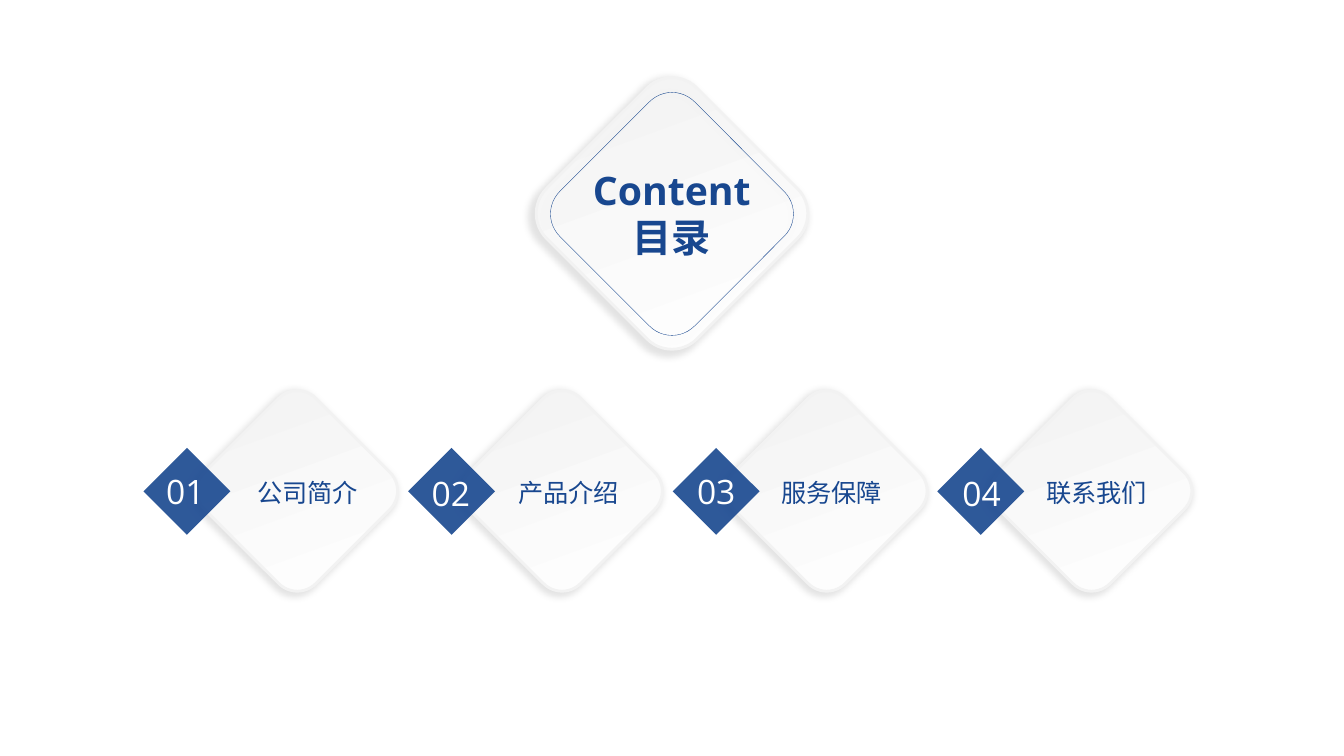
from dataclasses import dataclass
from lxml.etree import SubElement
from pptx import Presentation
from pptx.dml.color import RGBColor
from pptx.enum.shapes import MSO_SHAPE
from pptx.enum.text import MSO_AUTO_SIZE, PP_ALIGN
from pptx.oxml.ns import qn
from pptx.util import Pt


@dataclass(frozen=True)
class Theme:
    navy: RGBColor = RGBColor(0x18, 0x47, 0x8F)
    white: RGBColor = RGBColor(0xFF, 0xFF, 0xFF)
    mist: RGBColor = RGBColor(0xF2, 0xF2, 0xF2)
    font: str = "Open Sans"
    title_size: int = 28
    number_size: int = 24
    label_size: int = 18


theme = Theme()
deck = Presentation()
deck.slide_width, deck.slide_height = Pt(960), Pt(540)
slide = deck.slides.add_slide(deck.slide_layouts[6])


def add_tile(left, top, side, raised=True):
    """Add a rounded diamond with a soft shadow: a shaded tile, or only its thin outline."""
    tile = slide.shapes.add_shape(MSO_SHAPE.ROUNDED_RECTANGLE, Pt(left), Pt(top), Pt(side), Pt(side))
    tile.rotation = 45
    if raised:
        tile.fill.gradient()
        tile.fill.gradient_angle = 110
        for stop, color in zip(tile.fill.gradient_stops, (theme.white, theme.mist)):
            stop.color.rgb = color
        tile._element.spPr.find(qn("a:gradFill")).set("rotWithShape", "0")
    else:
        tile.fill.background()
    tile.line.color.rgb = theme.mist if raised else theme.navy
    tile.line.width = Pt(2 if raised else 0.25)
    tile.shadow.inherit = False
    effects = tile._element.spPr.find(qn("a:effectLst"))
    shadow = SubElement(effects, qn("a:outerShdw"), blurRad=str(Pt(5)), sx="102000",
                        sy="102000", algn="tr", rotWithShape="0")
    shade = SubElement(shadow, qn("a:srgbClr"), val="000000")
    SubElement(shade, qn("a:alpha"), val="11000")


def add_text(lines, left, top, width, height, size, color, bold=False,
             align=PP_ALIGN.CENTER, wrap=True):
    frame = slide.shapes.add_textbox(Pt(left), Pt(top), Pt(width), Pt(height)).text_frame
    frame.word_wrap = wrap
    frame.auto_size = MSO_AUTO_SIZE.SHAPE_TO_FIT_TEXT
    for index, line in enumerate(lines):
        paragraph = frame.add_paragraph() if index else frame.paragraphs[0]
        paragraph.alignment = align
        run = paragraph.add_run()
        run.text = line
        run.font.name = theme.font
        run.font.size = Pt(size)
        run.font.bold = bold
        run.font.color.rgb = color
        SubElement(run.font._element, qn("a:ea"), typeface=theme.font)


# Heading
add_tile(404, 76.5, 152)
add_tile(412, 84.8, 136, raised=False)
add_text(["Content", "目录"], 389.5, 115.2, 180.7, 74.9, theme.title_size, theme.navy, bold=True)

# Sections: name, left edge of its label, top of its number
sections = [
    ("公司简介", 160.6, 332.6),
    ("产品介绍", 347, 334.1),
    ("服务保障", 535, 332.6),
    ("联系我们", 724.3, 334.1),
]
for index, (section, label_left, number_top) in enumerate(sections):
    add_tile(156.2 + 189.1 * index, 294.5, 112.3)

    badge = slide.shapes.add_shape(MSO_SHAPE.RECTANGLE, Pt(111.6 + 189 * index), Pt(329),
                                   Pt(43.9), Pt(43.9))
    badge.rotation = 225
    badge.fill.solid()
    badge.fill.fore_color.rgb = theme.navy
    badge_color = badge._element.spPr.find(qn("a:solidFill")).find(qn("a:srgbClr"))
    SubElement(badge_color, qn("a:alpha"), val="90000")
    badge.line.fill.background()
    badge.shadow.inherit = False

    add_text([section], label_left, 337.7, 118, 29, theme.label_size, theme.navy)
    add_text([f"{index + 1:02}"], 111.6 + 189.6 * index, number_top, 42.5, 36,
             theme.number_size, theme.white, align=PP_ALIGN.LEFT, wrap=False)

deck.save("out.pptx")
